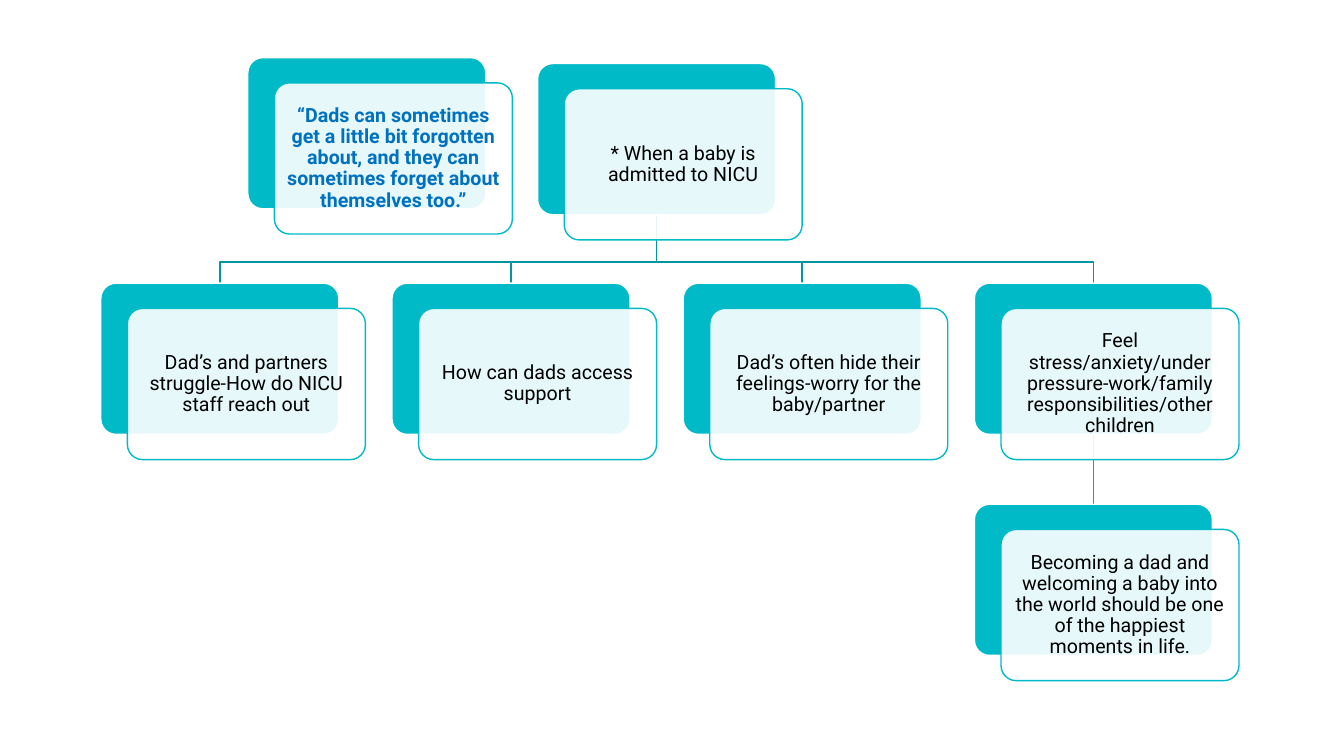
from lxml.etree import SubElement
from pptx import Presentation
from pptx.dml.color import RGBColor
from pptx.enum.shapes import MSO_CONNECTOR as CONN, MSO_SHAPE as SHAPE
from pptx.enum.text import MSO_ANCHOR as ANCHOR, PP_ALIGN as ALIGN
from pptx.oxml.ns import qn
from pptx.util import Pt

TEAL = RGBColor(0x00, 0xBA, 0xC8)
BRANCH = RGBColor(0x00, 0x95, 0xA0)
TAIL = RGBColor(0x00, 0xA9, 0xB6)
BLUE = RGBColor(0x00, 0x70, 0xC0)
WHITE = RGBColor(0xFF, 0xFF, 0xFF)
BLACK = RGBColor(0x00, 0x00, 0x00)

CARD_W, CARD_H = 170, 108
SHIFT_X, SHIFT_Y = 19, 18
PITCH = 208
LEFT, ROW_Y, LAST_Y = 72, 202.3, 360.2
ROOT_X, ROOT_Y = 384, 45.4
QUOTE_X, QUOTE_Y = 177, 41.2
BAR_DROP = 15.1

QUOTE = ("“Dads can sometimes get a little bit forgotten about, "
         "and they can sometimes forget about themselves too.”")
ROOT = "* When a baby is admitted to NICU"
CHILDREN = [
    "Dad’s and partners struggle-How do NICU staff reach out",
    "How can dads access support",
    "Dad’s often hide their feelings-worry for the baby/partner",
    "Feel stress/anxiety/under pressure-work/family responsibilities/other children",
]
LAST = ("Becoming a dad and welcoming a baby into the world "
        "should be one of the happiest moments in life.")


def add_panel(s, x, y, fill, line):
    sp = s.shapes.add_shape(SHAPE.ROUNDED_RECTANGLE, Pt(x), Pt(y), Pt(CARD_W), Pt(CARD_H))
    sp.adjustments[0] = 0.1
    sp.shadow.inherit = False
    sp.fill.solid()
    sp.fill.fore_color.rgb = fill
    sp.line.color.rgb = line
    sp.line.width = Pt(1)
    return sp


def add_card(s, x, y, text, color=BLACK, bold=False):
    add_panel(s, x, y, TEAL, WHITE)
    sp = add_panel(s, x + SHIFT_X, y + SHIFT_Y, WHITE, TEAL)
    rgb = sp.fill._xPr.find(qn("a:solidFill")).find(qn("a:srgbClr"))
    SubElement(rgb, qn("a:alpha")).set("val", "90000")
    tf = sp.text_frame
    tf.word_wrap = True
    tf.vertical_anchor = ANCHOR.MIDDLE
    tf.margin_left = tf.margin_right = tf.margin_top = tf.margin_bottom = Pt(4.2)
    p = tf.paragraphs[0]
    p.alignment = ALIGN.CENTER
    p.line_spacing = 0.9
    r = p.add_run()
    r.text = text
    r.font.name = "Roboto"
    r.font.size = Pt(14)
    r.font.bold = bold
    r.font.color.rgb = color


def add_branch(s, x1, y1, x2, y2):
    bar_y = y2 - BAR_DROP
    fb = s.shapes.build_freeform(Pt(x1), Pt(y1))
    corners = [(x1, bar_y), (x2, bar_y), (x2, y2)]
    fb.add_line_segments([(Pt(x), Pt(y)) for x, y in corners], close=False)
    sp = fb.convert_to_shape()
    sp.shadow.inherit = False
    sp.fill.background()
    sp.line.color.rgb = BRANCH
    sp.line.width = Pt(1)


def add_tail(s, x, y1, y2):
    line = s.shapes.add_connector(CONN.STRAIGHT, Pt(x), Pt(y1), Pt(x), Pt(y2))
    line.line.color.rgb = TAIL
    line.line.width = Pt(1)
    SubElement(line._element.spPr, qn("a:effectLst"))


def add_tree(s, x, y):
    half = CARD_W / 2
    columns = [x + i * PITCH for i in range(len(CHILDREN))]
    add_tail(s, columns[-1] + half, y + CARD_H, LAST_Y)
    for column in reversed(columns):
        add_branch(s, ROOT_X + half, ROOT_Y + CARD_H, column + half, y)
    add_card(s, ROOT_X, ROOT_Y, ROOT)
    for column, text in zip(columns, CHILDREN):
        add_card(s, column, y, text)
    add_card(s, columns[-1], LAST_Y, LAST)


def main():
    prs = Presentation()
    prs.slide_width, prs.slide_height = Pt(960), Pt(540)
    s = prs.slides.add_slide(prs.slide_layouts[6])
    add_tree(s, LEFT, ROW_Y)
    add_card(s, QUOTE_X, QUOTE_Y, QUOTE, BLUE, True)
    prs.save("out.pptx")


if __name__ == "__main__":
    main()
